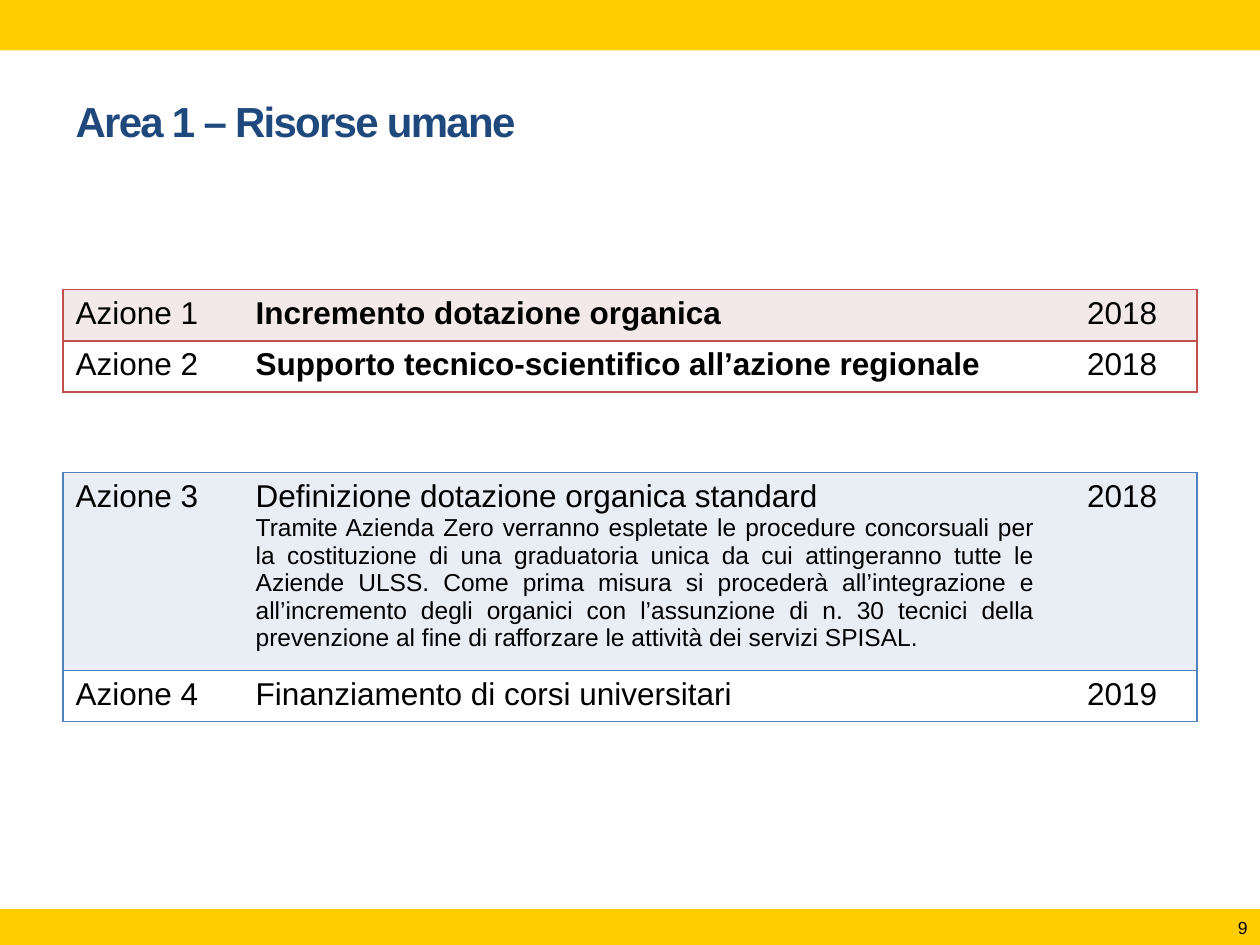
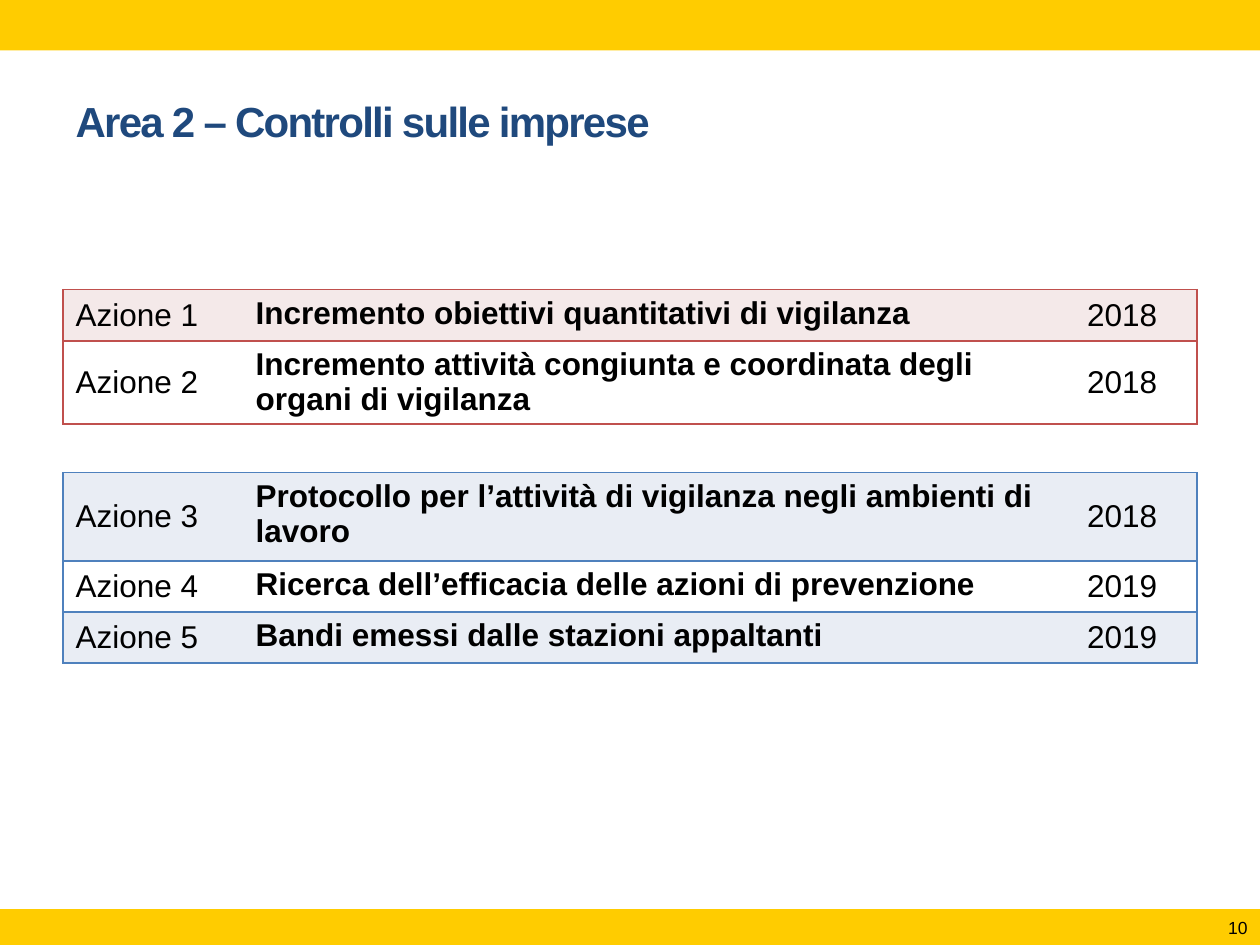
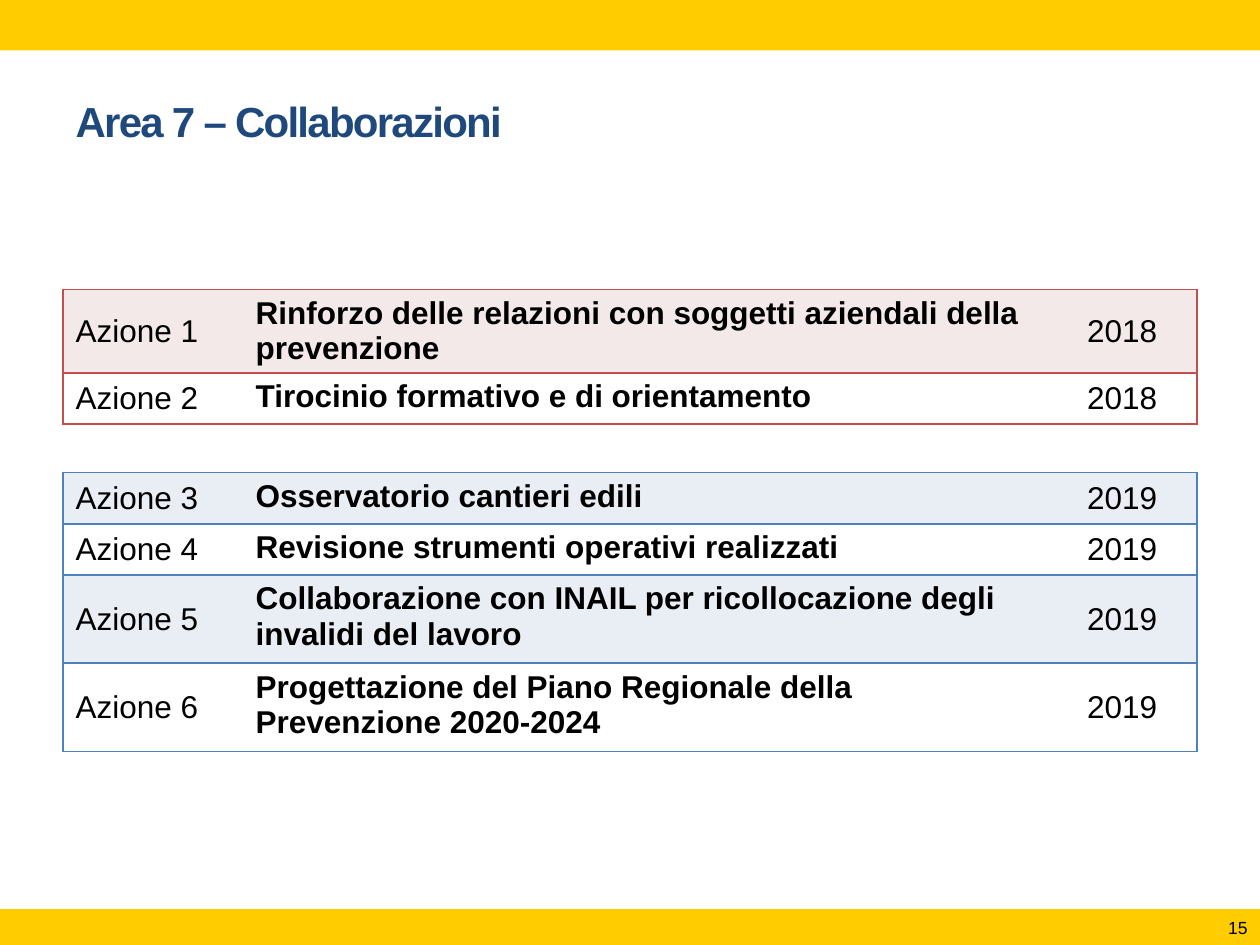
"""Builds three slides of planned actions by area, each with a red and a blue table."""
from itertools import count

from lxml.etree import SubElement
from pptx import Presentation
from pptx.dml.color import RGBColor
from pptx.enum.shapes import MSO_SHAPE
from pptx.enum.text import MSO_ANCHOR, PP_ALIGN
from pptx.oxml.ns import qn
from pptx.util import Cm, Pt

YELLOW = RGBColor(0xFF, 0xCC, 0x00)
NAVY = RGBColor(0x1F, 0x49, 0x7D)
BLACK = RGBColor(0x00, 0x00, 0x00)
WHITE = RGBColor(0xFF, 0xFF, 0xFF)
RED = RGBColor(0xC0, 0x50, 0x4D)
PINK = RGBColor(0xF4, 0xE9, 0xE9)
BLUE = RGBColor(0x4F, 0x81, 0xBD)
PALE_BLUE = RGBColor(0xE9, 0xED, 0xF4)

FONT = "Arial"
LEFT, WIDTH = Cm(1.27), Cm(22.86)
COLUMNS = (Cm(3.63), Cm(16.21), Cm(3.02))
ROW_HEIGHT = Cm(1.03)
FOOTER_TOP, FOOTER_HEIGHT = Cm(18.36), Cm(0.69)
BANDS = [(0, Cm(1.02), None), (FOOTER_TOP, FOOTER_HEIGHT, Pt(2.08))]

CONCORSI = (
    "Tramite Azienda Zero verranno espletate le procedure concorsuali per la "
    "costituzione di una graduatoria unica da cui attingeranno tutte le Aziende ULSS. "
    "Come prima misura si procederà all’integrazione e all’incremento degli organici "
    "con l’assunzione di n. 30 tecnici della prevenzione al fine di rafforzare le "
    "attività dei servizi SPISAL."
)

AREAS = [
    {
        "title": "Area 1 – Risorse umane",
        "page": 9,
        "anchor": MSO_ANCHOR.TOP,
        "blue_bold": False,
        "heights": (Cm(2.06), Cm(5)),
        "red": [
            ("2018", "Incremento dotazione organica"),
            ("2018", "Supporto tecnico-scientifico all’azione regionale"),
        ],
        "blue": [
            ("2018", "Definizione dotazione organica standard", CONCORSI),
            ("2019", "Finanziamento di corsi universitari"),
        ],
    },
    {
        "title": "Area 2 – Controlli sulle imprese",
        "page": 10,
        "anchor": MSO_ANCHOR.MIDDLE,
        "blue_bold": True,
        "heights": (Cm(2.82), Cm(3.84)),
        "red": [
            ("2018", "Incremento obiettivi quantitativi di vigilanza"),
            ("2018", "Incremento attività congiunta e coordinata degli organi di vigilanza"),
        ],
        "blue": [
            ("2018", "Protocollo per l’attività di vigilanza negli ambienti di lavoro"),
            ("2019", "Ricerca dell’efficacia delle azioni di prevenzione"),
            ("2019", "Bandi emessi dalle stazioni appaltanti"),
        ],
    },
    {
        "title": "Area 7 – Collaborazioni",
        "page": 15,
        "anchor": MSO_ANCHOR.MIDDLE,
        "blue_bold": True,
        "heights": (Cm(2.82), Cm(5.61)),
        "red": [
            ("2018", "Rinforzo delle relazioni con soggetti aziendali della prevenzione"),
            ("2018", "Tirocinio formativo e di orientamento"),
        ],
        "blue": [
            ("2019", "Osservatorio cantieri edili"),
            ("2019", "Revisione strumenti operativi realizzati"),
            ("2019", "Collaborazione con INAIL per ricollocazione degli invalidi del lavoro"),
            ("2019", "Progettazione del Piano Regionale della Prevenzione 2020-2024"),
        ],
    },
]


def format_paragraph(paragraph, size, color=BLACK, bold=False, align=PP_ALIGN.LEFT):
    paragraph.alignment = align
    font = paragraph.font
    font.name, font.size, font.bold = FONT, Pt(size), bold
    font.color.rgb = color


def add_bands(prs, slide):
    for position, (top, height, border) in enumerate(BANDS, start=2):
        band = slide.shapes.add_shape(MSO_SHAPE.RECTANGLE, 0, top, prs.slide_width, height)
        band.shadow.inherit = False
        band.fill.solid()
        band.fill.fore_color.rgb = YELLOW
        if border:
            band.line.color.rgb = YELLOW
            band.line.width = border
        else:
            band.line.fill.background()
        prs.slide_master.shapes.element.insert(position, band.element)


def set_title(slide, text):
    title = slide.shapes.title
    title.left, title.top, title.width, title.height = LEFT, Cm(1.47), WIDTH, Cm(2.74)
    frame = title.text_frame
    frame.text = text
    frame.vertical_anchor = MSO_ANCHOR.TOP
    frame.margin_top = Cm(0.46)
    heading = frame.paragraphs[0]
    format_paragraph(heading, 24, NAVY, bold=True)
    heading.runs[0]._r.get_or_add_rPr().set("spc", "-100")


def add_page_number(slide, page):
    number = slide.shapes.add_textbox(Cm(21.69), FOOTER_TOP, Cm(3.71), FOOTER_HEIGHT)
    number.text_frame.word_wrap = True
    number.text_frame.text = str(page)
    format_paragraph(number.text_frame.paragraphs[0], 10, align=PP_ALIGN.RIGHT)


def set_borders(cell, color, visible):
    properties = cell._tc.get_or_add_tcPr()
    for side in ("lnL", "lnR", "lnT", "lnB"):
        line = SubElement(properties, qn(f"a:{side}"), w=str(Pt(1)))
        if side in visible:
            fill = SubElement(line, qn("a:solidFill"))
            SubElement(fill, qn("a:srgbClr"), val=str(color))
        else:
            SubElement(line, qn("a:noFill"))


def add_actions(slide, actions, numbers, top, height, border, tint, bold, anchor):
    frame = slide.shapes.add_table(
        len(actions), len(COLUMNS), LEFT, top, WIDTH, ROW_HEIGHT * len(actions))
    table = frame.table
    table.first_row = table.horz_banding = False
    for column, width in zip(table.columns, COLUMNS):
        column.width = width
    for index, (row, (year, action, *details)) in enumerate(zip(table.rows, actions)):
        label, description, deadline = row.cells
        label.text = f"Azione {next(numbers)}"
        description.text = "\n".join([action, *details])
        deadline.text = year
        for cell, outer_side in ((label, "lnL"), (description, ""), (deadline, "lnR")):
            set_borders(cell, border, ("lnT", "lnB", outer_side))
            cell.fill.solid()
            cell.fill.fore_color.rgb = WHITE if index % 2 else tint
        label.vertical_anchor = deadline.vertical_anchor = anchor
        format_paragraph(label.text_frame.paragraphs[0], 18)
        format_paragraph(deadline.text_frame.paragraphs[0], 18, align=PP_ALIGN.CENTER)
        heading, *explanations = description.text_frame.paragraphs
        format_paragraph(heading, 18, bold=bold)
        for explanation in explanations:
            format_paragraph(explanation, 14, align=PP_ALIGN.JUSTIFY)
    frame.height = height


def main():
    prs = Presentation()
    prs.slide_width, prs.slide_height = Cm(25.4), Cm(19.05)
    for index, area in enumerate(AREAS):
        slide = prs.slides.add_slide(prs.slide_layouts[5])
        if index == 0:
            add_bands(prs, slide)
        set_title(slide, area["title"])
        numbers = count(1)
        red_height, blue_height = area["heights"]
        add_actions(slide, area["red"], numbers, Cm(5.84), red_height,
                    RED, PINK, True, area["anchor"])
        add_page_number(slide, area["page"])
        add_actions(slide, area["blue"], numbers, Cm(9.53), blue_height,
                    BLUE, PALE_BLUE, area["blue_bold"], area["anchor"])
    prs.save("out.pptx")


if __name__ == "__main__":
    main()
